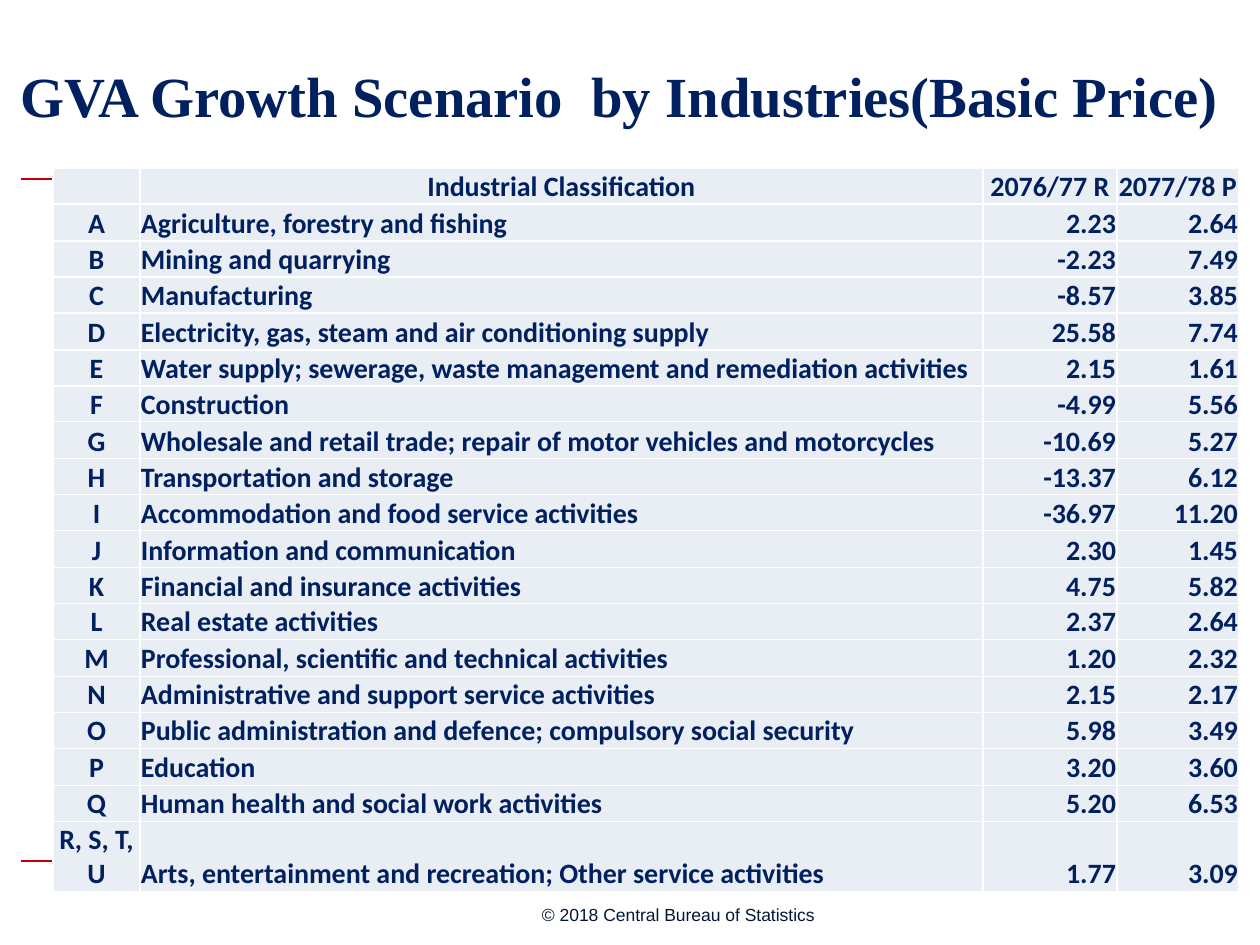
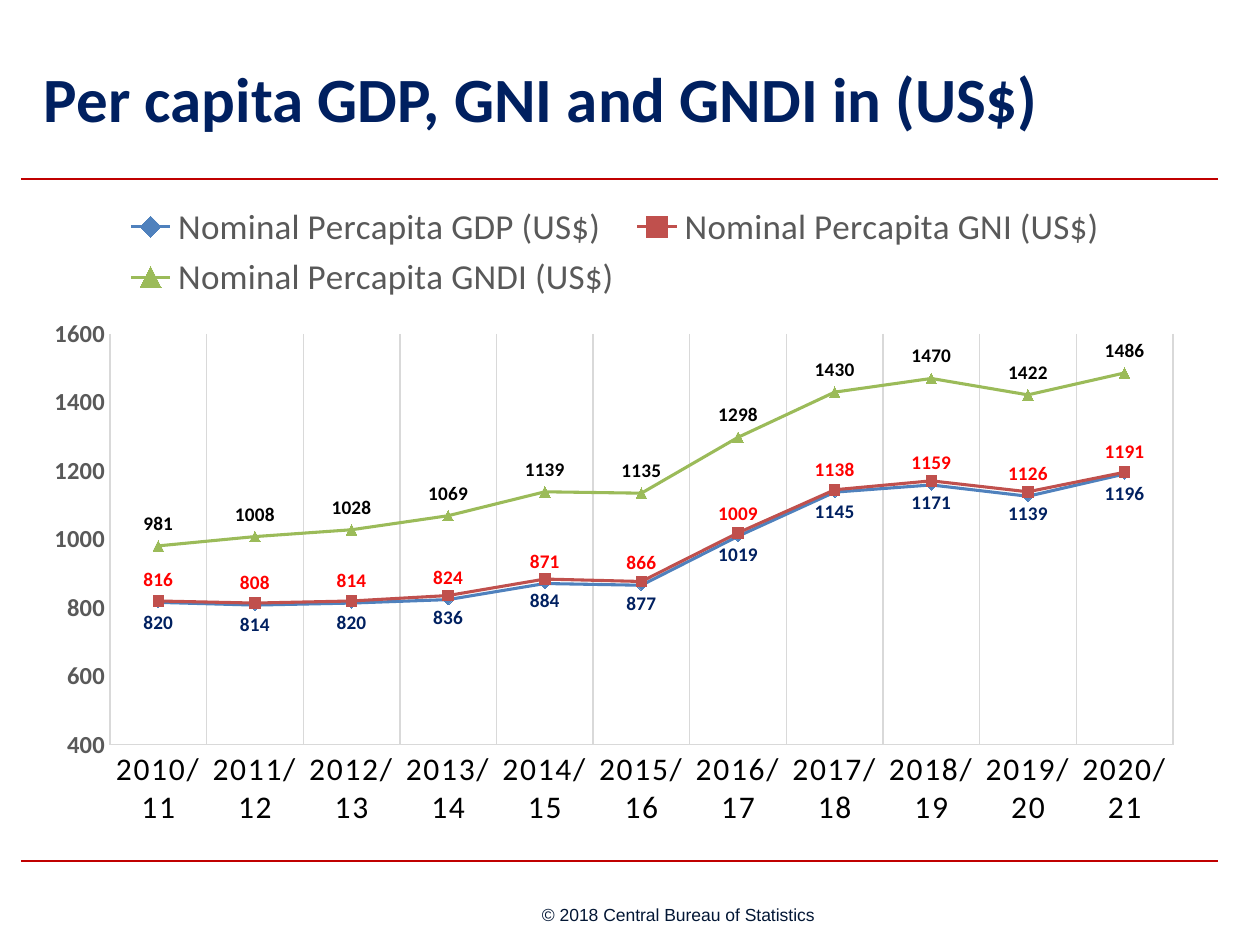
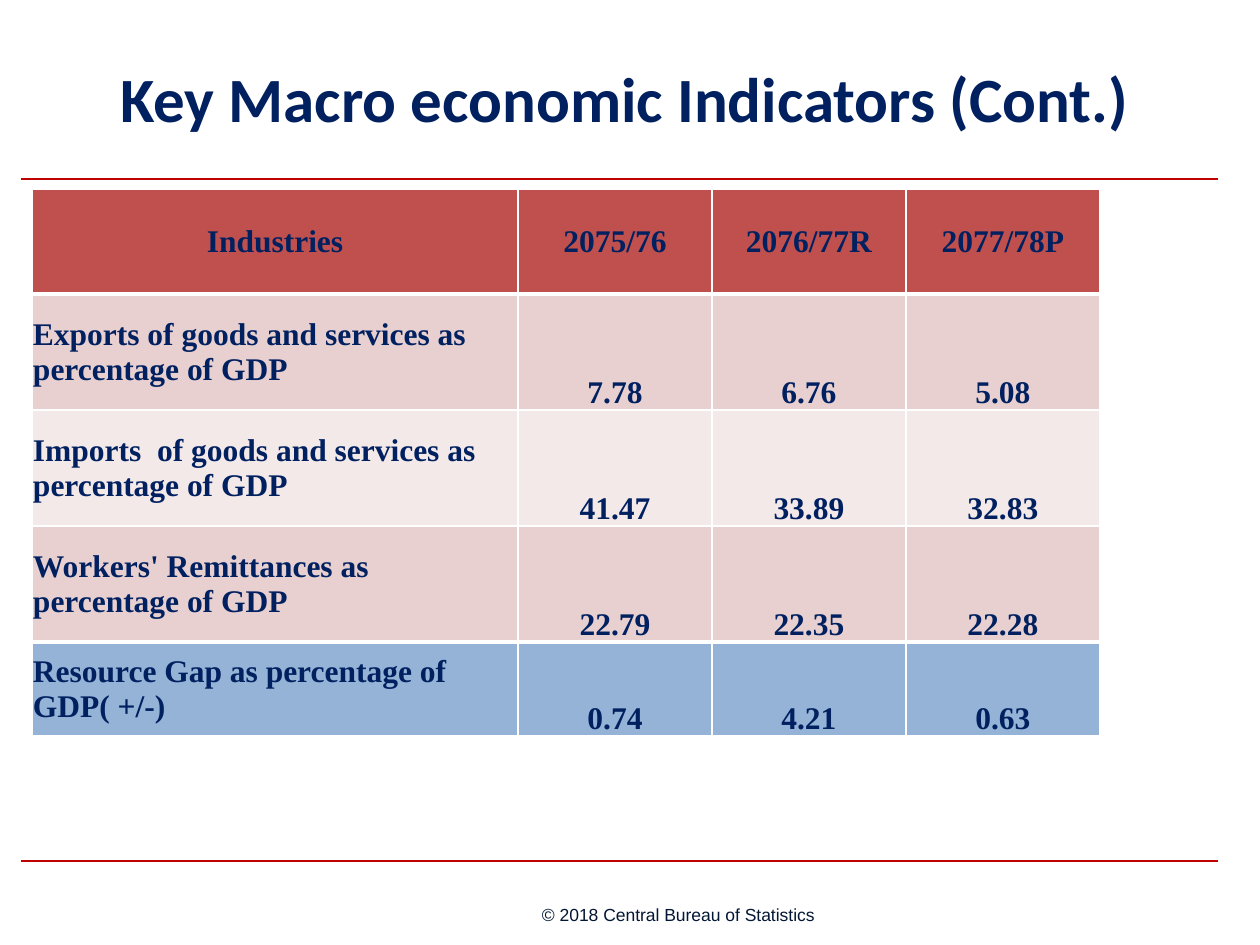
from lxml.etree import SubElement
from pptx import Presentation
from pptx.chart.data import CategoryChartData
from pptx.dml.color import RGBColor
from pptx.enum.chart import XL_CHART_TYPE, XL_LABEL_POSITION, XL_LEGEND_POSITION, XL_MARKER_STYLE, XL_TICK_MARK
from pptx.enum.shapes import MSO_CONNECTOR
from pptx.enum.text import MSO_ANCHOR, PP_ALIGN
from pptx.oxml.ns import qn
from pptx.util import Pt

EMU_PER_PX = 914400 / 126
COLORS = {
    "navy": "002060", "rule": "C00000", "footer": "031735", "white": "FFFFFF",
    "pale": "E9EDF4", "header": "C0504D", "rose": "E8D0D0", "blush": "F4E9E9",
    "gap": "95B3D7", "grid": "D9D9D9", "gray": "595959", "black": "000000",
    "red": "FF0000", "gdp": "4F81BD", "gni": "C0504D", "gndi": "9BBB59",
}
SANS, SERIF, FOOTER_FONT = "Calibri", "Times New Roman", "Arial"
LEFT, CENTER, RIGHT = PP_ALIGN.LEFT, PP_ALIGN.CENTER, PP_ALIGN.RIGHT
MIDDLE, BOTTOM = MSO_ANCHOR.MIDDLE, MSO_ANCHOR.BOTTOM

INDUSTRIES = [
    ("", "Industrial Classification", "2076/77 R", "2077/78 P"),
    ("A", "Agriculture, forestry and fishing", "2.23", "2.64"),
    ("B", "Mining and quarrying", "-2.23", "7.49"),
    ("C", "Manufacturing", "-8.57", "3.85"),
    ("D", "Electricity, gas, steam and air conditioning supply", "25.58", "7.74"),
    ("E", "Water supply; sewerage, waste management and remediation activities", "2.15", "1.61"),
    ("F", "Construction", "-4.99", "5.56"),
    ("G", "Wholesale and retail trade; repair of motor vehicles and motorcycles", "-10.69", "5.27"),
    ("H", "Transportation and storage", "-13.37", "6.12"),
    ("I", "Accommodation and food service activities", "-36.97", "11.20"),
    ("J", "Information and communication", "2.30", "1.45"),
    ("K", "Financial and insurance activities", "4.75", "5.82"),
    ("L", "Real estate activities", "2.37", "2.64"),
    ("M", "Professional, scientific and technical activities", "1.20", "2.32"),
    ("N", "Administrative and support service activities", "2.15", "2.17"),
    ("O", "Public administration and defence; compulsory social security", "5.98", "3.49"),
    ("P", "Education", "3.20", "3.60"),
    ("Q", "Human health and social work activities", "5.20", "6.53"),
    ("R, S, T, U", "Arts, entertainment and recreation; Other service activities", "1.77", "3.09"),
]
FISCAL_YEARS = [f"{year}/{year % 100 + 1}" for year in range(2010, 2021)]
PER_CAPITA = [
    ("Nominal Percapita GDP (US$)", "gdp", XL_MARKER_STYLE.DIAMOND, XL_LABEL_POSITION.ABOVE, "red",
     (816, 808, 814, 824, 871, 866, 1009, 1138, 1159, 1126, 1191)),
    ("Nominal Percapita GNI (US$)", "gni", XL_MARKER_STYLE.SQUARE, XL_LABEL_POSITION.BELOW, "navy",
     (820, 814, 820, 836, 884, 877, 1019, 1145, 1171, 1139, 1196)),
    ("Nominal Percapita GNDI (US$)", "gndi", XL_MARKER_STYLE.TRIANGLE, XL_LABEL_POSITION.ABOVE, "black",
     (981, 1008, 1028, 1069, 1139, 1135, 1298, 1430, 1470, 1422, 1486)),
]
INDICATORS = [
    ("Industries", "2075/76", "2076/77R", "2077/78P"),
    ("Exports of goods and services as percentage of GDP", "7.78", "6.76", "5.08"),
    ("Imports  of goods and services as percentage of GDP", "41.47", "33.89", "32.83"),
    ("Workers' Remittances as percentage of GDP", "22.79", "22.35", "22.28"),
    ("Resource Gap as percentage of GDP( +/-)", "0.74", "4.21", "0.63"),
]


def px(length):
    return round(length * EMU_PER_PX)


def rgb(color):
    return RGBColor.from_string(COLORS[color])


def style_font(font, size, face, color, bold=False):
    font.size, font.name, font.bold = Pt(size), face, bold
    font.color.rgb = rgb(color)


def style_line(line, color, width):
    line.color.rgb = rgb(color)
    line.width = Pt(width)


def set_border(cell, side, width):
    properties = cell._tc.get_or_add_tcPr()
    edge = SubElement(properties, qn(f"a:ln{side}"), w=str(Pt(width)))
    fill = SubElement(edge, qn("a:solidFill"))
    SubElement(fill, qn("a:srgbClr"), val=COLORS["white"])


class Deck:
    def __init__(self):
        self.presentation = Presentation()
        self.presentation.slide_width = px(1260)
        self.presentation.slide_height = px(945)
        self.slide = None

    def new_slide(self):
        self.slide = self.presentation.slides.add_slide(self.presentation.slide_layouts[6])
        for y in (179, 861):
            self.rule(21, 1218, y)
        self.text("© 2018 Central Bureau of Statistics", (542, 903, 277, 24),
                  10, FOOTER_FONT, "footer", inset=0)

    def rule(self, start, end, y):
        rule = self.slide.shapes.add_connector(MSO_CONNECTOR.STRAIGHT, px(start), px(y), px(end), px(y))
        style_line(rule.line, "rule", 1.5)
        SubElement(rule._element.spPr, qn("a:effectLst"))

    def text(self, words, box, size, face, color, bold=False, align=LEFT, inset=12):
        frame = self.slide.shapes.add_textbox(*map(px, box)).text_frame
        frame.word_wrap = True
        frame.vertical_anchor = MIDDLE
        frame.margin_left = frame.margin_right = px(inset)
        frame.margin_top = frame.margin_bottom = px(inset // 2)
        frame.text = words
        paragraph = frame.paragraphs[0]
        paragraph.alignment = align
        style_font(paragraph.runs[0].font, size, face, color, bold)

    def title(self, words, box, size=36, face=SANS, align=CENTER):
        self.text(words, box, size, face, "navy", True, align)

    def table(self, rows, corner, widths, heights, size, face, fills, aligns, anchor_of, heavy=()):
        box = (*corner, sum(widths), sum(heights))
        table = self.slide.shapes.add_table(len(rows), len(widths), *map(px, box)).table
        table.first_row = table.horz_banding = False
        for column, width in zip(table.columns, widths):
            column.width = px(width)
        for r, (row, height) in enumerate(zip(rows, heights)):
            table.rows[r].height = px(height)
            for c, words in enumerate(row):
                cell = table.cell(r, c)
                weights = {"L": 1, "R": 1, "T": 3 if r in heavy else 1, "B": 3 if r + 1 in heavy else 1}
                for side, weight in weights.items():
                    set_border(cell, side, weight)
                cell.fill.solid()
                cell.fill.fore_color.rgb = rgb(fills[r])
                cell.margin_left = cell.margin_right = cell.margin_top = px(1)
                cell.margin_bottom = 0
                cell.vertical_anchor = anchor_of(r, c)
                self.cell_text(cell, words, size, face, aligns[c] if r else CENTER)

    def cell_text(self, cell, words, size, face, align):
        paragraph = cell.text_frame.paragraphs[0]
        paragraph.alignment = align
        if words:
            paragraph.text = words
            style_font(paragraph.runs[0].font, size, face, "navy", True)
        else:
            SubElement(paragraph._p, qn("a:endParaRPr"), sz=str(size * 100))

    def line_chart(self, categories, measures, box, plot_area):
        data = CategoryChartData(number_format="0")
        data.categories = categories
        for name, *_, values in measures:
            data.add_series(name, values)
        chart = self.slide.shapes.add_chart(XL_CHART_TYPE.LINE_MARKERS, *map(px, box), data).chart
        chart.has_title = False
        style_font(chart.font, 10, SANS, "black")
        chart.has_legend = True
        chart.legend.position = XL_LEGEND_POSITION.TOP
        chart.legend.include_in_layout = False
        style_font(chart.legend.font, 20, SANS, "gray")
        self.axes(chart)
        self.place_plot(chart, box, plot_area)
        chart.plots[0].vary_by_categories = False
        for series, (_, color, marker, position, label_color, _) in zip(chart.plots[0].series, measures):
            series.smooth = False
            style_line(series.format.line, color, 1.75)
            series.marker.style, series.marker.size = marker, 6
            series.marker.format.fill.solid()
            series.marker.format.fill.fore_color.rgb = rgb(color)
            style_line(series.marker.format.line, color, 0.75)
            labels = series.data_labels
            labels.show_value = True
            labels.position = position
            labels.number_format, labels.number_format_is_linked = "0", False
            style_font(labels.font, 11, SANS, label_color, True)

    def axes(self, chart):
        years, dollars = chart.category_axis, chart.value_axis
        for axis in (years, dollars):
            axis.major_tick_mark = axis.minor_tick_mark = XL_TICK_MARK.NONE
            style_line(axis.format.line, "grid", 0.75)
        years.has_major_gridlines = True
        style_line(years.major_gridlines.format.line, "grid", 0.75)
        style_font(years.tick_labels.font, 18, SANS, "black")
        years._element.find(".//" + qn("a:defRPr")).set("spc", "100")
        dollars.has_major_gridlines = False
        dollars.minimum_scale, dollars.maximum_scale, dollars.major_unit = 400, 1600, 200
        dollars.tick_labels.number_format = "0"
        dollars.tick_labels.number_format_is_linked = False
        style_font(dollars.tick_labels.font, 14, SANS, "gray", True)

    def place_plot(self, chart, box, plot_area):
        plot = chart._chartSpace.chart.plotArea
        for layout in plot.findall(qn("c:layout")):
            plot.remove(layout)
        layout = SubElement(plot, qn("c:layout"))
        plot.insert(0, layout)
        manual = SubElement(layout, qn("c:manualLayout"))
        left, top, width, height = box
        x, y, w, h = plot_area
        settings = {
            "layoutTarget": "inner", "xMode": "edge", "yMode": "edge",
            "x": (x - left) / width, "y": (y - top) / height, "w": w / width, "h": h / height,
        }
        for tag, value in settings.items():
            SubElement(manual, qn(f"c:{tag}"), val=str(value))


def main():
    deck = Deck()

    deck.new_slide()
    deck.title("GVA Growth Scenario  by Industries(Basic Price)", (0, 32, 1239, 126), 32.4, SERIF)
    deck.table(INDUSTRIES, (53, 168), [87, 843, 134, 122], [36, 37, 36] * 6 + [70], 16, SANS,
               ["pale"] * len(INDUSTRIES), [CENTER, LEFT, RIGHT, RIGHT],
               lambda r, c: MIDDLE if (r, c) == (0, 1) else BOTTOM)

    deck.new_slide()
    deck.title("Per capita GDP, GNI and GNDI in (US$)", (32, 32, 1134, 130), align=LEFT)
    deck.line_chart(FISCAL_YEARS, PER_CAPITA, (32, 189, 1166, 651), (110, 334, 1063, 411))

    deck.new_slide()
    deck.title("Key Macro economic Indicators (Cont.)", (10, 32, 1229, 130))
    deck.table(INDICATORS, (32, 189), [486] + [194] * 3, [105] + [116] * 3 + [94], 18, SERIF,
               ["header", "rose", "blush", "rose", "gap"], [LEFT] + [CENTER] * 3,
               lambda r, c: BOTTOM if r and c else MIDDLE, heavy=(1, 4))

    deck.presentation.save("out.pptx")


if __name__ == "__main__":
    main()
